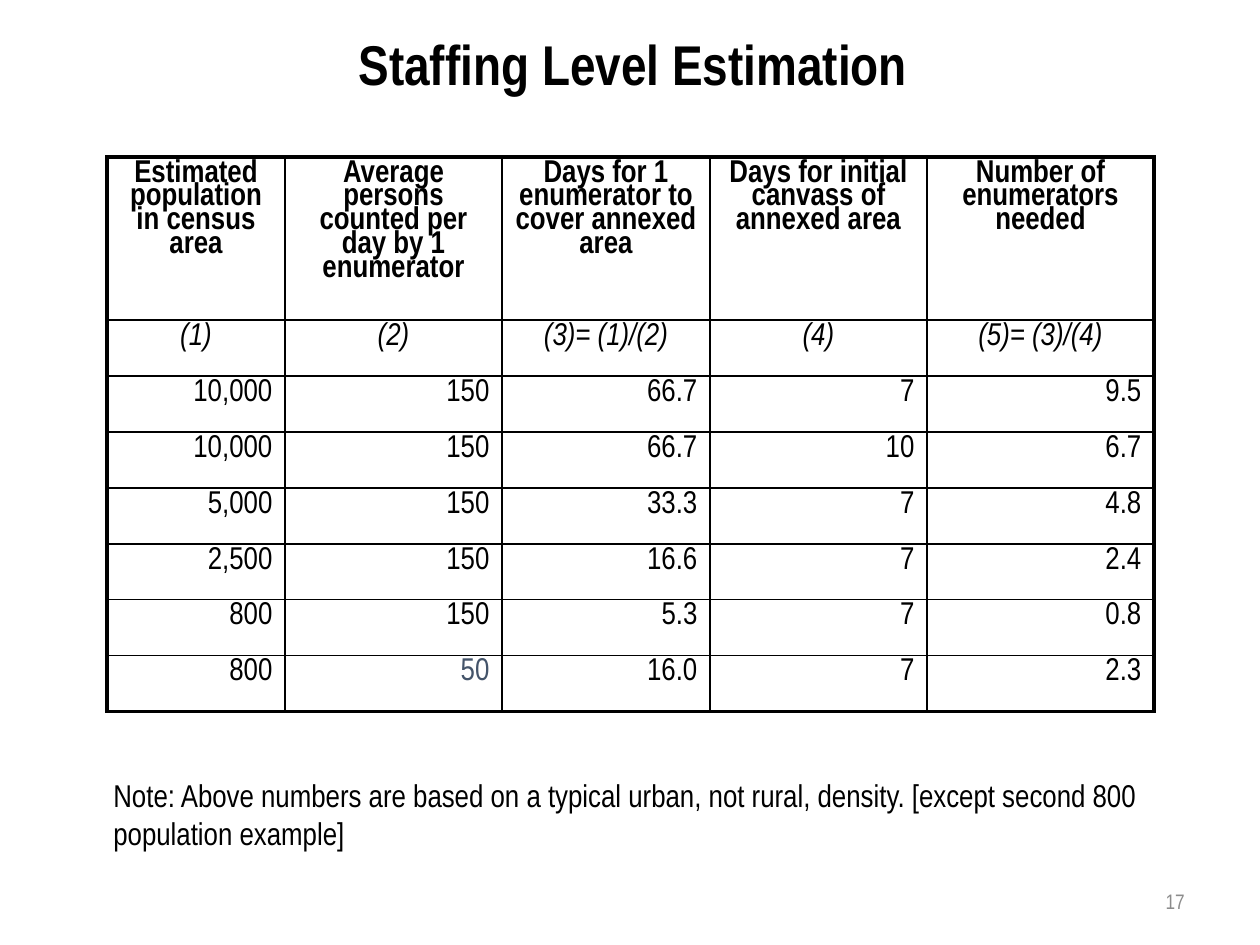
from lxml import etree
from pptx import Presentation
from pptx.dml.color import RGBColor
from pptx.enum.text import MSO_ANCHOR, MSO_AUTO_SIZE, PP_ALIGN
from pptx.oxml.ns import qn
from pptx.util import Emu, Pt

TOP, MIDDLE = MSO_ANCHOR.TOP, MSO_ANCHOR.MIDDLE
LEFT, CENTER, RIGHT = PP_ALIGN.LEFT, PP_ALIGN.CENTER, PP_ALIGN.RIGHT
NO_AUTOFIT = MSO_AUTO_SIZE.NONE

BLACK = RGBColor(0x00, 0x00, 0x00)
GRAY = RGBColor(0x8C, 0x8C, 0x8C)
SLATE = RGBColor(0x44, 0x54, 0x6A)
FONT = "Arial Narrow"
EMU_PER_PX = 914400 / 126

TITLE = "Staffing Level Estimation"
NOTE = ("Note: Above numbers are based on a typical urban, not rural, density. "
        "[except second 800 population example]")
PAGE_NUMBER = "17"
HEADINGS = [
    "Estimated population in census area",
    "Average persons counted per day by 1 enumerator",
    "Days for 1 enumerator to cover annexed area",
    "Days for initial canvass of annexed area",
    "Number of enumerators needed",
]
FORMULAS = ["(1)", "(2)", "(3)= (1)/(2)", "(4)", "(5)= (3)/(4)"]
ESTIMATES = [
    ["10,000", "150", "66.7", "7", "9.5"],
    ["10,000", "150", "66.7", "10", "6.7"],
    ["5,000", "150", "33.3", "7", "4.8"],
    ["2,500", "150", "16.6", "7", "2.4"],
    ["800", "150", "5.3", "7", "0.8"],
    ["800", "50", "16.0", "7", "2.3"],
]
RURAL_DENSITY = "50"

TABLE_LEFT, TABLE_TOP = 107, 157
COLUMN_WIDTHS = [178, 217, 208, 217, 227]
HEADING_HEIGHT, ROW_HEIGHT = 163, 56
THIN, THICK = Pt(1), Pt(2.25)


def px(length):
    return Emu(round(length * EMU_PER_PX))


def write(frame, text, size, align=LEFT, color=BLACK, bold=False, italic=False):
    para = frame.paragraphs[0]
    para.alignment = align
    span = para.add_run()
    span.text = text
    font = span.font
    font.name, font.size, font.bold, font.italic = FONT, Pt(size), bold, italic
    font.color.rgb = color
    return para


def add_text_box(page, left, top, width, height, anchor=TOP):
    frame = page.shapes.add_textbox(px(left), px(top), px(width), px(height)).text_frame
    frame.word_wrap = True
    frame.vertical_anchor = anchor
    return frame


def set_borders(cell, widths):
    """Draw the cell's left, right, top and bottom borders, in that order."""
    properties = cell._tc.get_or_add_tcPr()
    for side, width in zip("LRTB", widths):
        line = etree.SubElement(properties, qn(f"a:ln{side}"), w=str(width))
        fill = etree.SubElement(line, qn("a:solidFill"))
        etree.SubElement(fill, qn("a:srgbClr"), val=str(BLACK))


def add_title(page):
    title = page.shapes.title
    title.left, title.top, title.width, title.height = px(94), px(31), px(1071), px(126)
    frame = title.text_frame
    frame.auto_size = NO_AUTOFIT
    frame.vertical_anchor = TOP
    frame.margin_left = px(20)
    write(frame, TITLE, 32, CENTER, bold=True).line_spacing = 0.9


def add_estimates(page):
    rows = [HEADINGS, FORMULAS] + ESTIMATES
    heights = [HEADING_HEIGHT] + [ROW_HEIGHT] * (len(rows) - 1)
    table = page.shapes.add_table(
        len(rows), len(HEADINGS), px(TABLE_LEFT), px(TABLE_TOP),
        px(sum(COLUMN_WIDTHS)), px(sum(heights))).table
    table.first_row = table.horz_banding = False
    for column, width in zip(table.columns, COLUMN_WIDTHS):
        column.width = px(width)
    for row, height in zip(table.rows, heights):
        row.height = px(height)

    last_row, last_column = len(rows) - 1, len(HEADINGS) - 1
    for r, values in enumerate(rows):
        for c, value in enumerate(values):
            cell = table.cell(r, c)
            outer_sides = (c == 0, c == last_column, r == 0, r == last_row)
            set_borders(cell, [THICK if outer else THIN for outer in outer_sides])
            cell.fill.background()
            para = write(cell.text_frame, value, 18,
                         align=CENTER if r < 2 else RIGHT,
                         color=SLATE if value == RURAL_DENSITY else BLACK,
                         bold=r == 0, italic=r == 1)
            para.line_spacing = 0.8


def main():
    deck = Presentation()
    deck.slide_width, deck.slide_height = px(1260), px(945)
    page = deck.slides.add_slide(deck.slide_layouts.get_by_name("Title Only"))
    add_title(page)
    add_estimates(page)
    write(add_text_box(page, 101, 770, 1071, 89), NOTE, 18)
    write(add_text_box(page, 903, 876, 294, 50, MIDDLE), PAGE_NUMBER, 12, RIGHT, GRAY)
    deck.save("out.pptx")


if __name__ == "__main__":
    main()
